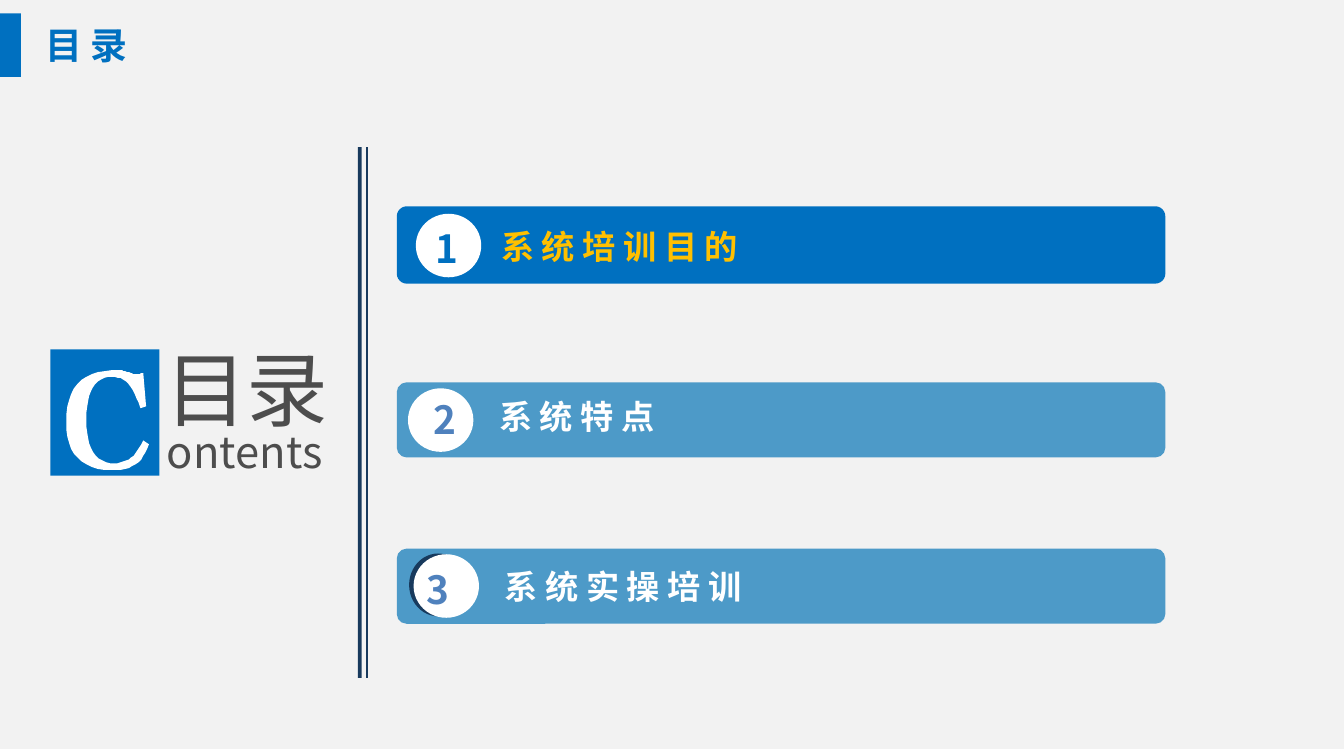
from dataclasses import dataclass

from lxml.etree import SubElement
from pptx import Presentation
from pptx.dml.color import RGBColor
from pptx.enum.shapes import MSO_SHAPE as Preset
from pptx.enum.text import MSO_ANCHOR as Anchor, PP_ALIGN as Align
from pptx.oxml.ns import qn
from pptx.shapes.autoshape import Shape
from pptx.slide import Slide
from pptx.util import Cm, Pt

FONT = "Noto Sans CJK SC"
BLUE, PALE_BLUE, NAVY = "0070C0", "4D9AC8", "183A5D"
WHITE, GOLD, STEEL, GRAY = "FFFFFF", "FFC000", "4F81BD", "4D4D4D"

Point = tuple[float, float]


@dataclass(frozen=True)
class Box:
    left: float
    top: float
    width: float
    height: float

    def emu(self) -> tuple[Cm, Cm, Cm, Cm]:
        return Cm(self.left), Cm(self.top), Cm(self.width), Cm(self.height)


@dataclass(frozen=True)
class TextStyle:
    size: float
    color: str
    bold: bool = True


@dataclass(frozen=True)
class Chapter:
    number: str
    title: str
    bar: Box
    disc: Point
    number_at: Point
    title_box: Box
    bar_color: str = PALE_BLUE
    title_color: str = WHITE
    number_color: str = STEEL
    crescent: Box | None = None


CHAPTERS = [
    Chapter("1", "系 统 培 训 目 的", Box(10.62, 5.52, 20.57, 2.07), (11.13, 5.72),
            (11.38, 5.87), Box(13.16, 5.92, 18.34, 1.32), BLUE, GOLD, BLUE),
    Chapter("2", "系 统 特 点", Box(10.62, 10.23, 20.57, 2.01), (10.92, 10.39),
            (11.33, 10.46), Box(13.11, 10.46, 16.99, 1.35)),
    Chapter("3", "系 统 实 操 培 训", Box(10.62, 14.68, 20.57, 2.01), (11.07, 14.83),
            (11.15, 15.01), Box(13.26, 15.01, 16.99, 1.35),
            crescent=Box(10.95, 14.81, 1.55, 1.68)),
]

INITIAL_UNIT = 0.0254
INITIAL_START = (154, 428)
INITIAL_SEGMENTS = [
    [(151, 393)],
    [(151, 393), (150, 393), (149, 393)],
    [(147, 394), (146, 394), (144, 394)],
    [(142, 394), (140, 394), (138, 393)],
    [(130, 390), (123, 389), (117, 390)],
    [(86, 391), (70, 409), (70, 445)],
    [(70, 478), (86, 495), (118, 495)],
    [(138, 496), (151, 487), (157, 468)],
    [(151, 464)],
    [(144, 480), (134, 488), (121, 488)],
    [(101, 488), (91, 472), (91, 442)],
    [(91, 412), (100, 397), (118, 397)],
    [(131, 396), (141, 407), (148, 430)],
]


def rgb(color: str) -> RGBColor:
    return RGBColor.from_string(color)


def paint(shape: Shape, color: str) -> Shape:
    shape.shadow.inherit = False
    shape.fill.solid()
    shape.fill.fore_color.rgb = rgb(color)
    shape.line.fill.background()
    return shape


def add_block(slide: Slide, preset: Preset, box: Box, color: str) -> Shape:
    return paint(slide.shapes.add_shape(preset, *box.emu()), color)


def add_text(slide: Slide, text: str, box: Box, style: TextStyle,
             wrap: bool = True, inset: bool = True,
             align: Align = Align.LEFT) -> None:
    frame = slide.shapes.add_textbox(*box.emu()).text_frame
    frame.word_wrap = wrap
    frame.vertical_anchor = Anchor.MIDDLE
    if not inset:
        frame.margin_left = frame.margin_right = Cm(0)
        frame.margin_top = frame.margin_bottom = Cm(0)
    paragraph = frame.paragraphs[0]
    paragraph.alignment = align
    run = paragraph.add_run()
    run.text = text
    run.font.size = Pt(style.size)
    run.font.bold = style.bold
    run.font.color.rgb = rgb(style.color)
    run.font.name = FONT
    SubElement(run.font._element, qn("a:ea"), typeface=FONT)


def curve_points(start: Point, first: Point, second: Point, end: Point,
                 steps: int = 12) -> list[Point]:
    points = []
    for step in range(1, steps + 1):
        t = step / steps
        weights = ((1 - t) ** 3, 3 * t * (1 - t) ** 2, 3 * t * t * (1 - t), t ** 3)
        x, y = (sum(w * value for w, value in zip(weights, axis))
                for axis in zip(start, first, second, end))
        points.append((x, y))
    return points


def add_initial(slide: Slide) -> None:
    outline = [INITIAL_START]
    for segment in INITIAL_SEGMENTS:
        outline += segment if len(segment) == 1 else curve_points(outline[-1], *segment)
    builder = slide.shapes.build_freeform(*INITIAL_START, scale=float(Cm(INITIAL_UNIT)))
    builder.add_line_segments(outline[1:], close=True)
    paint(builder.convert_to_shape(), WHITE)


def add_contents_mark(slide: Slide) -> None:
    add_block(slide, Preset.RECTANGLE, Box(1.35, 9.35, 2.92, 3.38), BLUE)
    add_initial(slide)
    add_text(slide, "目录", Box(4.42, 8.73, 5, 3.3), TextStyle(62, GRAY, False),
             wrap=False, inset=False)
    add_text(slide, "ontents", Box(4.47, 11.24, 4.5, 1.68), TextStyle(33, GRAY, False),
             wrap=False, inset=False)


def add_chapter(slide: Slide, chapter: Chapter) -> None:
    bar = add_block(slide, Preset.ROUNDED_RECTANGLE, chapter.bar, chapter.bar_color)
    bar.adjustments[0] = 0.13
    if chapter.crescent:
        add_block(slide, Preset.OVAL, chapter.crescent, NAVY)
    add_text(slide, chapter.title, chapter.title_box, TextStyle(25.2, chapter.title_color))
    add_block(slide, Preset.OVAL, Box(*chapter.disc, 1.75, 1.7), WHITE)
    add_text(slide, chapter.number, Box(*chapter.number_at, 1.14, 1.52),
             TextStyle(29.4, chapter.number_color), wrap=False, align=Align.CENTER)


def main() -> None:
    deck = Presentation()
    deck.slide_width, deck.slide_height = Cm(35.97), Cm(20.04)
    slide = deck.slides.add_slide(deck.slide_layouts[6])
    slide.background.fill.solid()
    slide.background.fill.fore_color.rgb = rgb("F2F2F2")

    add_block(slide, Preset.RECTANGLE, Box(0, 0.36, 0.56, 1.7), BLUE)
    add_contents_mark(slide)
    for left, width in ((9.58, 0.1), (9.8, 0.05)):
        add_block(slide, Preset.RECTANGLE, Box(left, 3.94, width, 14.2), NAVY)
    for chapter in CHAPTERS:
        add_chapter(slide, chapter)
    add_text(slide, "目 录", Box(0.97, 0.46, 8.89, 1.45), TextStyle(28, BLUE))
    deck.save("out.pptx")


if __name__ == "__main__":
    main()
